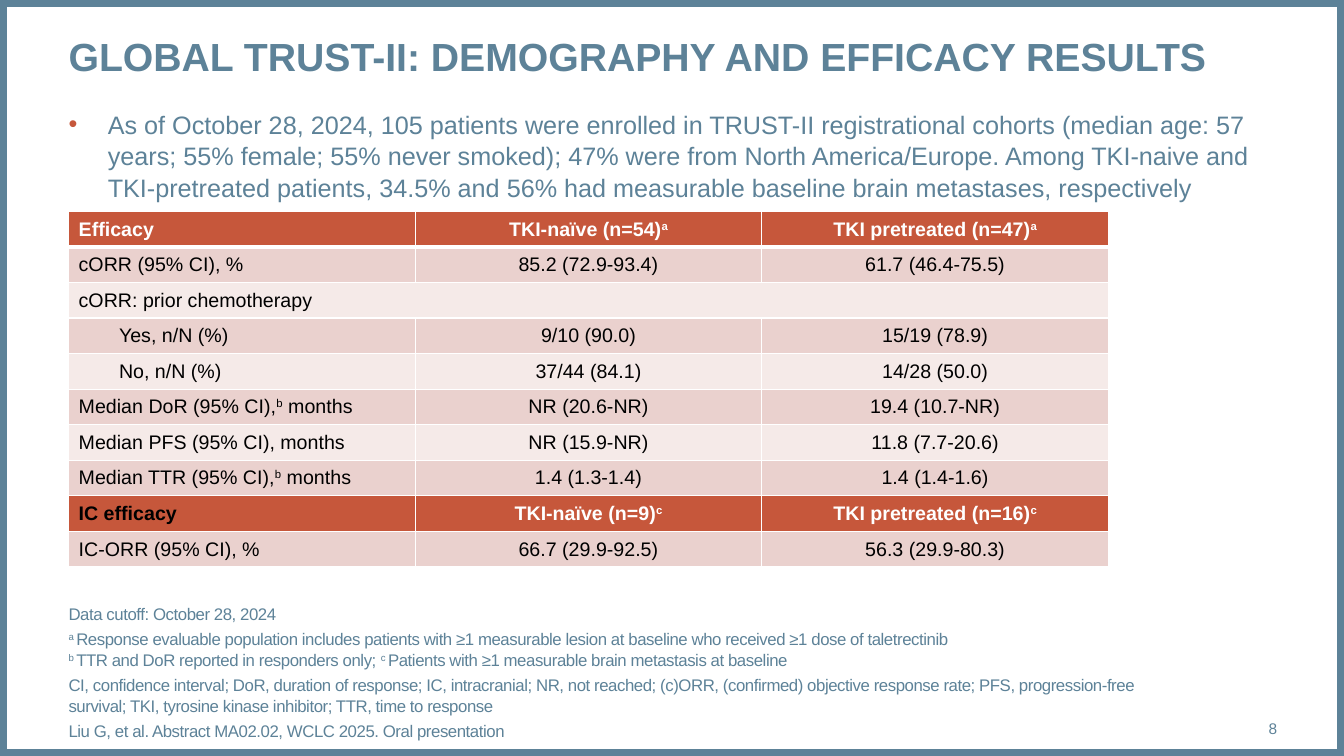
from pptx import Presentation
from pptx.dml.color import RGBColor
from pptx.enum.shapes import MSO_SHAPE
from pptx.enum.text import MSO_ANCHOR, MSO_AUTO_SIZE, PP_ALIGN
from pptx.oxml.ns import qn
from pptx.util import Pt
from lxml.etree import SubElement

COLORS = {"slate": "5D8298", "rust": "C6573B", "rose": "EAD1CE",
          "blush": "F5EAE8", "white": "FFFFFF", "black": "000000"}
FONT = "Arial"
SLIDE_W, SLIDE_H = 960, 540
LEFT, WIDTH = 49, 863

TITLE = "GLOBAL TRUST-II: DEMOGRAPHY AND EFFICACY RESULTS"
SUMMARY = ("As of October 28, 2024, 105 patients were enrolled in TRUST-II registrational cohorts "
           "(median age: 57 years; 55% female; 55% never smoked); 47% were from North America/Europe. "
           "Among TKI-naive and TKI-pretreated patients, 34.5% and 56% had measurable baseline brain "
           "metastases, respectively")
RESULTS = [
    ("Efficacy", "TKI-naïve (n=54)^a", "TKI pretreated (n=47)^a"),
    ("cORR (95% CI), %", "85.2 (72.9-93.4)", "61.7 (46.4-75.5)"),
    ("cORR: prior chemotherapy",),
    ("Yes, n/N (%)", "9/10 (90.0)", "15/19 (78.9)"),
    ("No, n/N (%)", "37/44 (84.1)", "14/28 (50.0)"),
    ("Median DoR (95% CI),^b^ months", "NR (20.6-NR)", "19.4 (10.7-NR)"),
    ("Median PFS (95% CI), months", "NR (15.9-NR)", "11.8 (7.7-20.6)"),
    ("Median TTR (95% CI),^b^ months", "1.4 (1.3-1.4)", "1.4 (1.4-1.6)"),
    ("IC efficacy", "TKI-naïve (n=9)^c", "TKI pretreated (n=16)^c"),
    ("IC-ORR (95% CI), %", "66.7 (29.9-92.5)", "56.3 (29.9-80.3)"),
]
HEADER_ROWS = (0, 8)
INDENTED_ROWS = (3, 4)
FOOTNOTES = [
    ["Data cutoff: October 28, 2024"],
    ["^a ^Response evaluable population includes patients with ≥1 measurable lesion at baseline "
     "who received ≥1 dose of taletrectinib",
     "^b ^TTR and DoR reported in responders only; ^c ^Patients with ≥1 measurable brain "
     "metastasis at baseline"],
    ["CI, confidence interval; DoR, duration of response; IC, intracranial; NR, not reached; "
     "(c)ORR, (confirmed) objective response rate; PFS, progression-free survival; "
     "TKI, tyrosine kinase inhibitor; TTR, time to response"],
    ["Liu G, et al. Abstract MA02.02, WCLC 2025. Oral presentation"],
]
PAGE = "8"


def rgb(name):
    return RGBColor.from_string(COLORS[name])


def write(paragraph, text, size, color="slate", bold=False, spacing=None):
    for index, part in enumerate(text.split("^")):
        if not part:
            continue
        run = paragraph.add_run()
        run.text = part
        run.font.name, run.font.size, run.font.bold = FONT, Pt(size), bold
        run.font.color.rgb = rgb(color)
        if index % 2:
            run.font._element.set("baseline", "30000")
        if spacing is not None:
            run.font._element.set("spc", str(round(spacing * 100)))


def prepare(frame, anchor):
    frame.word_wrap = True
    frame.auto_size = MSO_AUTO_SIZE.NONE
    frame.vertical_anchor = anchor
    frame.margin_left = frame.margin_right = frame.margin_top = frame.margin_bottom = 0
    return frame


def add_text(slide, left, top, width, height, anchor):
    box = slide.shapes.add_textbox(Pt(left), Pt(top), Pt(width), Pt(height))
    return prepare(box.text_frame, anchor)


def indent(paragraph, margin, first):
    properties = paragraph._p.get_or_add_pPr()
    properties.set("marL", str(Pt(margin)))
    properties.set("indent", str(Pt(first)))
    return properties


def add_borders(cell, bottom):
    properties = cell._tc.get_or_add_tcPr()
    for side, width in (("L", 1), ("R", 1), ("T", 1), ("B", bottom)):
        line = SubElement(properties, qn(f"a:ln{side}"), w=str(Pt(width)))
        fill = SubElement(line, qn("a:solidFill"))
        SubElement(fill, qn("a:srgbClr"), val=COLORS["white"])


def add_frame(slide):
    frame = slide.shapes.add_shape(MSO_SHAPE.RECTANGLE, 0, 0, Pt(SLIDE_W), Pt(SLIDE_H))
    frame.shadow.inherit = False
    frame.fill.background()
    frame.line.color.rgb = rgb("slate")
    frame.line.width = Pt(10)


def add_title(slide):
    title = slide.shapes.title
    title.left, title.top, title.width, title.height = Pt(LEFT), Pt(20), Pt(WIDTH), Pt(68)
    paragraph = prepare(title.text_frame, MSO_ANCHOR.TOP).paragraphs[0]
    paragraph.alignment = PP_ALIGN.LEFT
    paragraph.line_spacing = 1.1
    write(paragraph, TITLE, 28, bold=True)


def add_summary(slide):
    paragraph = add_text(slide, LEFT, 77, WIDTH, 356, MSO_ANCHOR.TOP).paragraphs[0]
    properties = indent(paragraph, 28, -28)
    bullet_color = SubElement(properties, qn("a:buClr"))
    SubElement(bullet_color, qn("a:srgbClr"), val=COLORS["rust"])
    SubElement(properties, qn("a:buFont"), typeface=FONT)
    SubElement(properties, qn("a:buChar"), char="•")
    paragraph.line_spacing = 1.04
    write(paragraph, SUMMARY, 18)


def add_results(slide):
    columns, row_height, column_width = 3, 25.4, 247.6
    table = slide.shapes.add_table(len(RESULTS), columns, Pt(LEFT), Pt(151),
                                   Pt(columns * column_width),
                                   Pt(len(RESULTS) * row_height)).table
    for column in table.columns:
        column.width = Pt(column_width)
    for r, values in enumerate(RESULTS):
        table.rows[r].height = Pt(row_height)
        header = r in HEADER_ROWS
        fill = "rust" if header else "rose" if r % 2 else "blush"
        for c in range(columns):
            cell = table.cell(r, c)
            add_borders(cell, 3 if r == 0 else 1)
            cell.fill.solid()
            cell.fill.fore_color.rgb = rgb(fill)
            cell.vertical_anchor = MSO_ANCHOR.MIDDLE
            cell.margin_left = cell.margin_right = Pt(7.2)
            cell.margin_top = cell.margin_bottom = Pt(4.6)
            if c >= len(values):
                continue
            paragraph = cell.text_frame.paragraphs[0]
            paragraph.alignment = PP_ALIGN.CENTER if c else PP_ALIGN.LEFT
            if c == 0 and r in INDENTED_ROWS:
                indent(paragraph, 36, -7.2)
            color = "white" if header and (r == 0 or c) else "black"
            write(paragraph, values[c], 14, color, header)
        if len(values) == 1:
            table.cell(r, 0).merge(table.cell(r, columns - 1))


def add_footnotes(slide):
    notes = add_text(slide, LEFT, 500.4, 801.4, 28.8, MSO_ANCHOR.BOTTOM)
    for index, lines in enumerate(FOOTNOTES):
        paragraph = notes.add_paragraph() if index else notes.paragraphs[0]
        paragraph.line_spacing = 1.04
        if index:
            paragraph.space_before = Pt(3)
        for number, line in enumerate(lines):
            if number:
                paragraph.add_line_break()
            write(paragraph, line, 12, spacing=-0.3)


def add_page(slide):
    paragraph = add_text(slide, 850.4, 506, 62, 28.8, MSO_ANCHOR.MIDDLE).paragraphs[0]
    paragraph.alignment = PP_ALIGN.RIGHT
    write(paragraph, PAGE, 11)


def main():
    deck = Presentation()
    deck.slide_width, deck.slide_height = Pt(SLIDE_W), Pt(SLIDE_H)
    slide = deck.slides.add_slide(deck.slide_layouts[5])
    for add_part in (add_frame, add_title, add_summary, add_results, add_footnotes, add_page):
        add_part(slide)
    deck.save("out.pptx")


if __name__ == "__main__":
    main()
